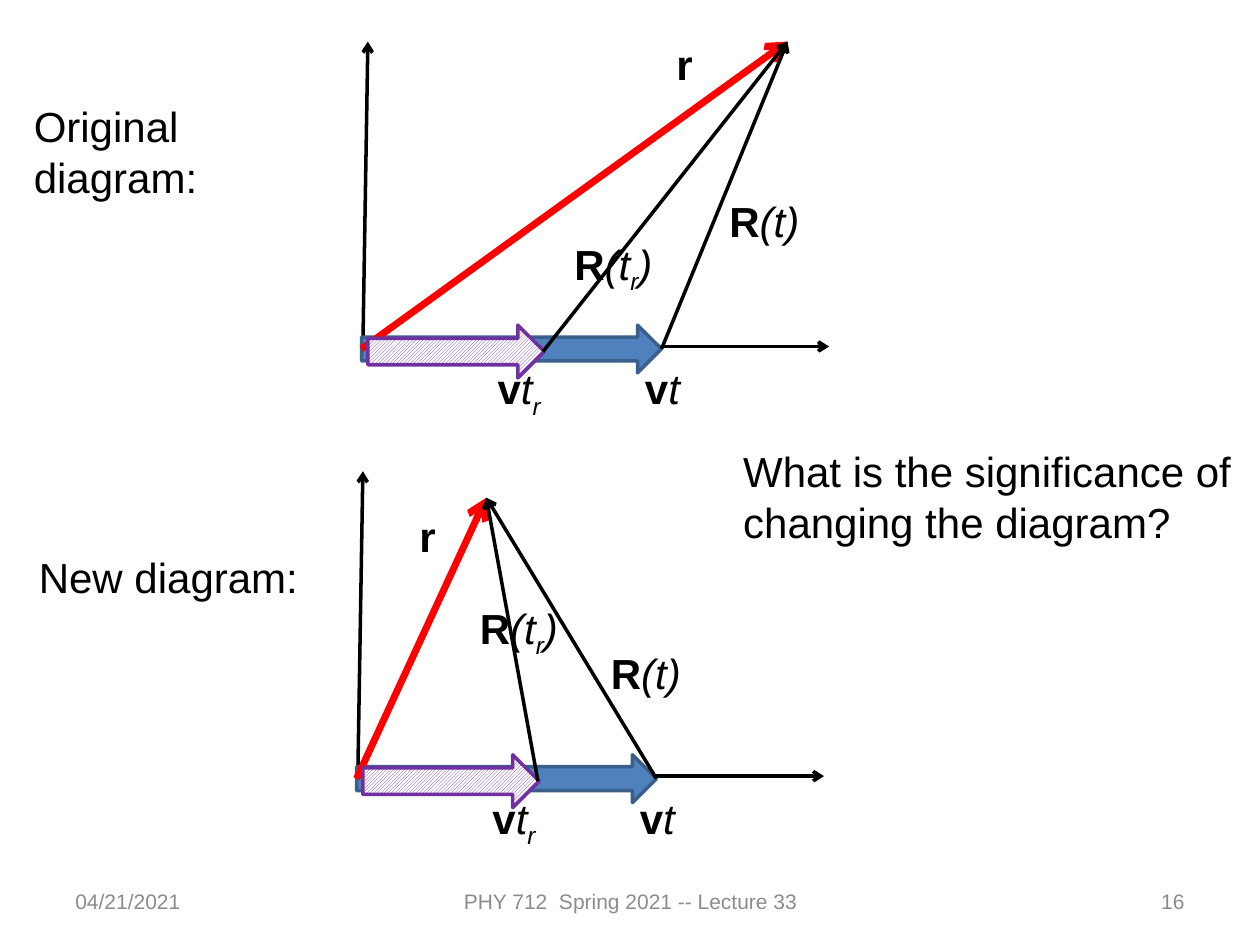
from lxml.etree import SubElement
from pptx import Presentation
from pptx.dml.color import RGBColor
from pptx.enum.dml import MSO_PATTERN
from pptx.enum.shapes import MSO_CONNECTOR, MSO_SHAPE
from pptx.enum.text import MSO_ANCHOR, MSO_AUTO_SIZE, PP_ALIGN
from pptx.oxml.ns import qn
from pptx.util import Inches, Pt

COLORS = {"text": "000000", "footer": "8C8C8C", "position": "FF0000",
          "present": "4F81BD", "present_edge": "3A5F8C",
          "retarded": "7030A0", "paper": "FFFFFF"}

# Runs: (text, font formats, baseline shift)
BOLD, ITALIC = {"bold": True}, {"italic": True}
SUB_R = ("r", ITALIC, -25000)
LABELS = {
    "vt": [("v", BOLD, 0), ("t", ITALIC, 0)],
    "vtr": [("v", BOLD, 0), ("t", ITALIC, 0), SUB_R],
    "r": [("r", BOLD, 0)],
    "Rt": [("R", BOLD, 0), ("(t)", ITALIC, 0)],
    "Rtr": [("R", BOLD, 0), ("(t", ITALIC, 0), SUB_R, (")", ITALIC, 0)],
}
DIAGRAMS = [
    {"origin": (2.88, 2.75), "tip": (6.25, 0.33),
     "r": (5.27, 0.26), "Rt": (5.69, 1.5), "Rtr": (4.46, 1.84)},
    {"origin": (2.84, 6.16), "tip": (3.86, 3.95),
     "r": (3.23, 4.0), "Rt": (4.75, 5.09), "Rtr": (3.71, 4.73)},
]
CAPTIONS = [
    ("Original diagram:", (0.17, 0.75, 2.33, 0.91)),
    ("New diagram:", (0.21, 4.33, 2.33, 0.5)),
    ("What is the significance of changing the diagram?", (5.8, 3.49, 4.4, 1.31)),
]
FOOTERS = [
    ("04/21/2021", 0.5, 2.33, PP_ALIGN.LEFT),
    ("PHY 712  Spring 2021 -- Lecture 33", 3.42, 3.17, PP_ALIGN.CENTER),
    ("16", 7.17, 2.33, PP_ALIGN.RIGHT),
]


def rgb(name):
    return RGBColor.from_string(COLORS[name])


def add_text(shapes, runs, box, size=24, color="text", align=PP_ALIGN.LEFT,
             anchor=MSO_ANCHOR.TOP, fit=MSO_AUTO_SIZE.SHAPE_TO_FIT_TEXT):
    frame = shapes.add_textbox(*map(Inches, box)).text_frame
    frame.word_wrap, frame.auto_size, frame.vertical_anchor = True, fit, anchor
    paragraph = frame.paragraphs[0]
    paragraph.alignment = align
    for text, formats, baseline in runs:
        run = paragraph.add_run()
        run.text = text
        for name, value in {"name": "Arial", "size": Pt(size), **formats}.items():
            setattr(run.font, name, value)
        run.font.color.rgb = rgb(color)
        if baseline:
            run.font._element.set("baseline", str(baseline))


def add_vector(shapes, start, end, color="text", width=2):
    vector = shapes.add_connector(MSO_CONNECTOR.STRAIGHT, *map(Inches, start + end))
    vector.line.color.rgb = rgb(color)
    vector.line.width = Pt(width)
    SubElement(vector.line._get_or_add_ln(), qn("a:tailEnd"), type="arrow")
    SubElement(vector._element.spPr, qn("a:effectLst"))


def add_block_arrow(shapes, corner, size, edge):
    arrow = shapes.add_shape(MSO_SHAPE.RIGHT_ARROW, *map(Inches, corner + size))
    arrow.shadow.inherit = False
    arrow.line.color.rgb = rgb(edge)
    arrow.line.width = Pt(2)
    return arrow.fill


def add_diagram(shapes, diagram):
    tip = diagram["tip"]

    def at(dx, dy):
        x, y = diagram["origin"]
        return x + dx, y + dy

    def add_label(key, corner):
        add_text(shapes, LABELS[key], corner + (0.98, 0.5))

    # Axes
    for end in (at(0.04, -2.42), at(3.7, 0)):
        add_vector(shapes, at(0, 0), end)

    # Displacement at the present time
    fill = add_block_arrow(shapes, at(-0.01, -0.17), (2.38, 0.38), "present_edge")
    fill.solid()
    fill.fore_color.rgb = rgb("present")
    add_label("vt", at(2.14, 0.08))

    # Field point and its distance now
    add_vector(shapes, at(-0.01, 0.02), tip, "position", 4)
    add_label("r", diagram["r"])
    add_vector(shapes, at(2.37, 0.02), tip)
    add_label("Rt", diagram["Rt"])

    # Displacement and distance at the retarded time
    fill = add_block_arrow(shapes, at(0.04, -0.17), (1.4, 0.42), "retarded")
    fill.patterned()
    fill.pattern = MSO_PATTERN.DARK_UPWARD_DIAGONAL
    fill.fore_color.rgb = rgb("retarded")
    fill.back_color.rgb = rgb("paper")
    add_label("vtr", at(0.97, 0.08))
    add_vector(shapes, at(1.43, 0.04), tip)
    add_label("Rtr", diagram["Rtr"])


def main():
    deck = Presentation()
    deck.slide_width, deck.slide_height = Inches(10), Inches(7.5)
    slide = deck.slides.add_slide(deck.slide_layouts[6])

    for text, left, width, align in FOOTERS:
        add_text(slide.shapes, [(text, {}, 0)], (left, 6.95, width, 0.4), 12,
                 "footer", align, MSO_ANCHOR.MIDDLE, MSO_AUTO_SIZE.NONE)
    for diagram in DIAGRAMS:
        add_diagram(slide.shapes.add_group_shape().shapes, diagram)
    for text, box in CAPTIONS:
        add_text(slide.shapes, [(text, {}, 0)], box)

    deck.save("out.pptx")


if __name__ == "__main__":
    main()
